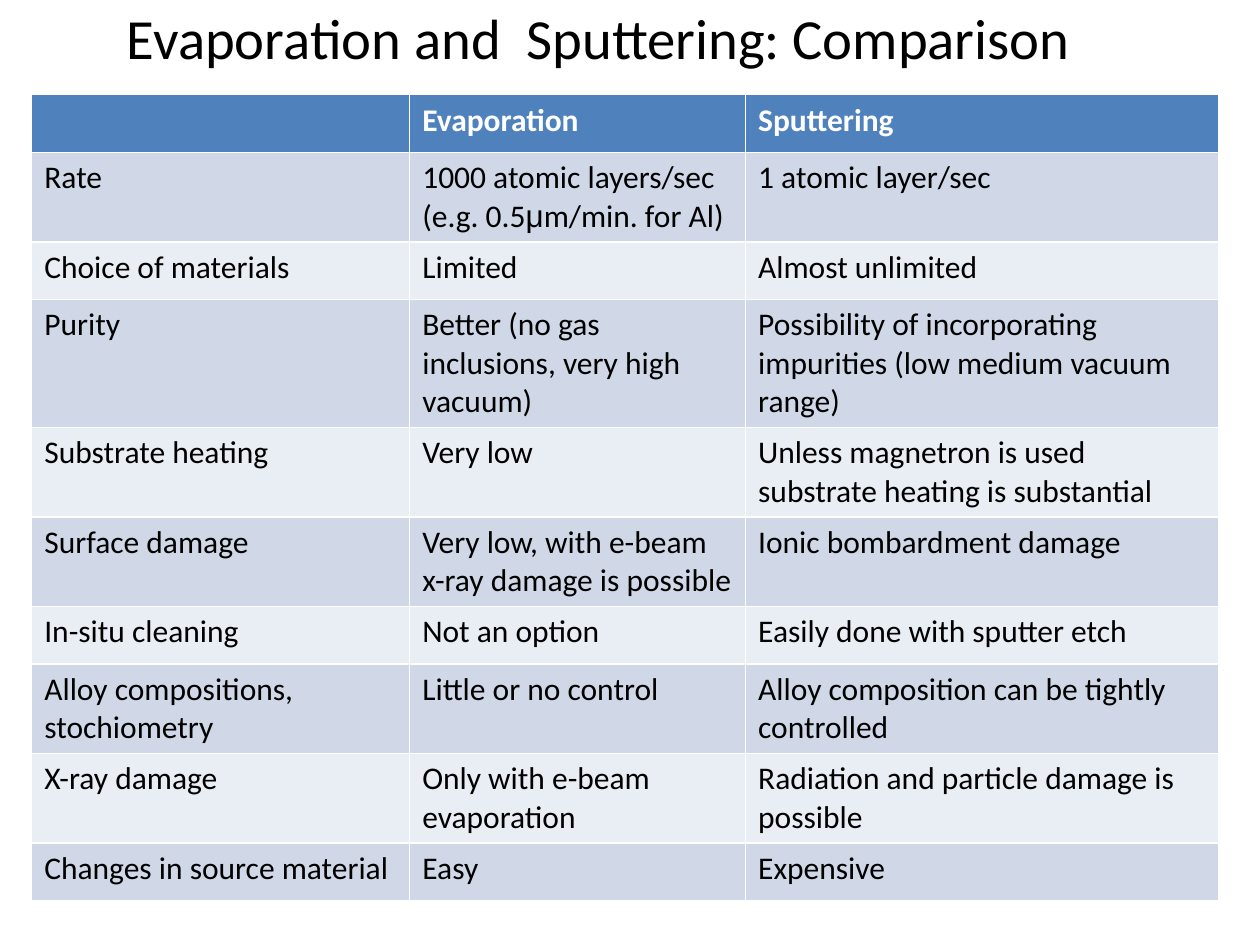
from pptx import Presentation
from pptx import util as u
from pptx.dml.color import RGBColor
from pptx.enum import text

TITLE = "Evaporation and  Sputtering: Comparison"
ROWS = [
    ("", "Evaporation", "Sputtering"),
    ("Rate", "1000 atomic layers/sec (e.g. 0.5μm/min. for Al)", "1 atomic layer/sec"),
    ("Choice of materials", "Limited", "Almost unlimited"),
    ("Purity", "Better (no gas inclusions, very high vacuum)",
     "Possibility of incorporating impurities (low medium vacuum range)"),
    ("Substrate heating", "Very low",
     "Unless magnetron is used substrate heating is substantial"),
    ("Surface damage", "Very low, with e-beam x-ray damage is possible",
     "Ionic bombardment damage"),
    ("In-situ cleaning", "Not an option", "Easily done with sputter etch"),
    ("Alloy compositions, stochiometry", "Little or no control",
     "Alloy composition can be tightly controlled"),
    ("X-ray damage", "Only with e-beam evaporation",
     "Radiation and particle damage is possible"),
    ("Changes in source material", "Easy", "Expensive"),
]
COL_WIDTHS = (7.62, 6.77, 9.53)
ROW_HEIGHT = 1.16
TABLE_HEIGHT = 16.09
HEADER, BANDS = "4F81BD", ("E9EDF4", "D0D8E8")
WHITE, BLACK = "FFFFFF", "000000"


def color(target, value):
    target.rgb = RGBColor.from_string(value)


def style(p, size, value, bold=False):
    p.font.name = "Calibri"
    p.font.size = u.Pt(size)
    p.font.bold = bold
    color(p.font.color, value)


def add_text(p, content):
    before, mu, after = content.partition("μ")
    for part in filter(None, (before, mu, after)):
        r = p.add_run()
        r.text = part
        r.font.name = "Arial" if part == "μ" else "Calibri"


def add_title(s):
    sp = s.shapes.title
    sp.left, sp.top = u.Cm(0), u.Cm(0)
    sp.width, sp.height = u.Cm(24.13), u.Cm(1.48)
    tf = sp.text_frame
    tf.text = TITLE
    tf.auto_size = text.MSO_AUTO_SIZE.NONE
    tf.vertical_anchor = text.MSO_ANCHOR.MIDDLE
    p = tf.paragraphs[0]
    p.alignment = text.PP_ALIGN.CENTER
    style(p, 32.4, BLACK)


def add_comparison(s):
    frame = s.shapes.add_table(len(ROWS), len(COL_WIDTHS), u.Cm(0.64), u.Cm(1.91),
                               u.Cm(sum(COL_WIDTHS)), u.Cm(TABLE_HEIGHT))
    table = frame.table
    for column, width in zip(table.columns, COL_WIDTHS):
        column.width = u.Cm(width)
    for i, row in enumerate(ROWS):
        table.rows[i].height = u.Cm(ROW_HEIGHT)
        for j, content in enumerate(row):
            cell = table.cell(i, j)
            cell.fill.solid()
            color(cell.fill.fore_color, BANDS[i % 2] if i else HEADER)
            p = cell.text_frame.paragraphs[0]
            style(p, 18, BLACK if i else WHITE, bold=i == 0)
            add_text(p, content)
    frame.height = u.Cm(TABLE_HEIGHT)


def main():
    prs = Presentation()
    prs.slide_width, prs.slide_height = u.Cm(25.4), u.Cm(19.05)
    s = prs.slides.add_slide(prs.slide_layouts[5])
    add_title(s)
    add_comparison(s)
    prs.save("out.pptx")


if __name__ == "__main__":
    main()
